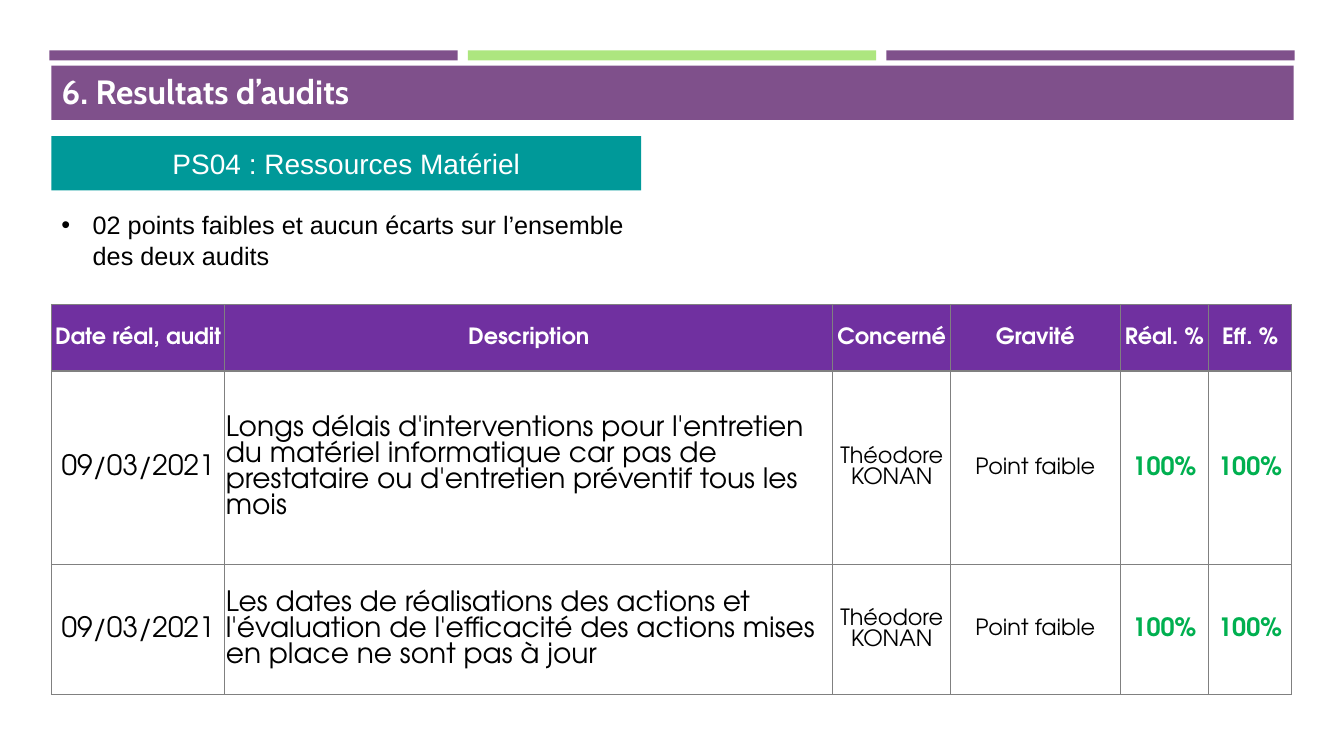
import pptx
import pptx.util
import pptx.dml.color
import pptx.enum.shapes
import pptx.enum.text
import pptx.oxml
import pptx.oxml.ns

RGBColor = pptx.dml.color.RGBColor
PURPLE = RGBColor(0x7F, 0x50, 0x8B)
GREEN = RGBColor(0xAD, 0xE6, 0x7F)
TEAL = RGBColor(0x00, 0x99, 0x99)
VIOLET = RGBColor(0x70, 0x30, 0xA0)
SCORE = RGBColor(0x00, 0xB0, 0x50)
GREY = RGBColor(0x80, 0x80, 0x80)
WHITE = RGBColor(0xFF, 0xFF, 0xFF)
BLACK = RGBColor(0x00, 0x00, 0x00)

EMU_PER_PX = 9144
TABLE_FONT = "TeX Gyre Adventor"
LEFT = pptx.enum.text.PP_ALIGN.LEFT
CENTER = pptx.enum.text.PP_ALIGN.CENTER
TOP = pptx.enum.text.MSO_ANCHOR.TOP
MIDDLE = pptx.enum.text.MSO_ANCHOR.MIDDLE

COLUMN_WIDTHS = [172, 603, 117, 168, 88, 82]
ROW_HEIGHTS = [66, 192, 129]
HEADERS = ["Date réal, audit", "Description", "Concerné", "Gravité", "Réal. %", "Eff. %"]
FINDINGS = [
    "Longs délais d'interventions pour l'entretien du matériel informatique car pas de "
    "prestataire ou d'entretien préventif tous les mois",
    "Les dates de réalisations des actions et l'évaluation de l'efficacité des actions "
    "mises en place ne sont pas à jour",
]
BODY_SIZES = [20, 20, 16, 16, 18, 18]


def px(length):
    return pptx.util.Emu(length * EMU_PER_PX)


def place(shape, left, top, width, height):
    shape.left, shape.top = px(left), px(top)
    shape.width, shape.height = px(width), px(height)


def style(para, font, size, color, bold=False, align=LEFT):
    para.alignment = align
    para.font.name = font
    para.font.size = pptx.util.Pt(size)
    para.font.color.rgb = color
    para.font.bold = bold


def add_bar(page, left, top, width, height, color):
    bar = page.shapes.add_shape(
        pptx.enum.shapes.MSO_SHAPE.RECTANGLE, px(left), px(top), px(width), px(height))
    bar.shadow.inherit = False
    bar.fill.solid()
    bar.fill.fore_color.rgb = color
    bar.line.fill.background()
    return bar


def set_title(page, text):
    title = page.shapes.title
    place(title, 51, 65, 1232, 54)
    title.fill.solid()
    title.fill.fore_color.rgb = PURPLE
    frame = title.text_frame
    frame.text = text
    frame.vertical_anchor = TOP
    frame.auto_size = pptx.enum.text.MSO_AUTO_SIZE.NONE
    style(frame.paragraphs[0], "Cabin", 24, WHITE, bold=True)


def add_heading(page, text):
    heading = add_bar(page, 51, 135, 585, 54, TEAL)
    frame = heading.text_frame
    frame.text = text
    frame.vertical_anchor = MIDDLE
    style(frame.paragraphs[0], "Arial", 20, WHITE, align=CENTER)


def set_bullet(page, text):
    body = page.placeholders[1]
    place(body, 51, 203, 585, 71)
    frame = body.text_frame
    frame.text = text
    frame.vertical_anchor = TOP
    frame.auto_size = pptx.enum.text.MSO_AUTO_SIZE.SHAPE_TO_FIT_TEXT
    para = frame.paragraphs[0]
    para.space_before = pptx.util.Pt(0)
    properties = para._p.get_or_add_pPr()
    properties.set("marL", str(px(31)))
    properties.set("indent", str(px(-31)))
    namespace = pptx.oxml.ns.nsdecls("a")
    properties.append(pptx.oxml.parse_xml(f'<a:buFont {namespace} typeface="Arial"/>'))
    properties.append(pptx.oxml.parse_xml(f'<a:buChar {namespace} char="•"/>'))
    style(para, "Arial", 18, BLACK)


def set_borders(cell, widths):
    properties = cell._tc.get_or_add_tcPr()
    for index, (side, width) in enumerate(zip("LRTB", widths)):
        properties.insert(index, pptx.oxml.parse_xml(
            f'<a:ln{side} {pptx.oxml.ns.nsdecls("a")} w="{pptx.util.Pt(width)}">'
            f'<a:solidFill><a:srgbClr val="{GREY}"/></a:solidFill></a:ln{side}>'))


def fill_cell(cell, row, column, text):
    header = row == 0
    score = column >= 4 and not header
    cell.margin_left = cell.margin_right = cell.margin_top = px(1)
    cell.margin_bottom = 0
    cell.vertical_anchor = MIDDLE
    cell.text = text
    style(
        cell.text_frame.paragraphs[0],
        TABLE_FONT,
        16 if header else BODY_SIZES[column],
        WHITE if header else SCORE if score else BLACK,
        bold=header or score,
        align=LEFT if column == 1 and not header else CENTER,
    )
    if header:
        cell.fill.solid()
        cell.fill.fore_color.rgb = VIOLET
    else:
        cell.fill.background()
    left = 1 if column <= 1 else 0.5
    right = 1 if column in (0, len(HEADERS) - 1) else 0.5
    set_borders(cell, (left, right, 1, 1))


def add_audit_table(page):
    rows = [HEADERS] + [
        ["09/03/2021", finding, "Théodore KONAN", "Point faible", "100%", "100%"]
        for finding in FINDINGS
    ]
    table = page.shapes.add_table(
        len(rows), len(HEADERS), px(51), px(302),
        px(sum(COLUMN_WIDTHS)), px(sum(ROW_HEIGHTS))).table
    table.horz_banding = False
    for column, width in zip(table.columns, COLUMN_WIDTHS):
        column.width = px(width)
    for row, height in zip(table.rows, ROW_HEIGHTS):
        row.height = px(height)
    for row, texts in enumerate(rows):
        for column, text in enumerate(texts):
            fill_cell(table.cell(row, column), row, column, text)


def main():
    deck = pptx.Presentation()
    deck.slide_width, deck.slide_height = px(1333), px(750)
    page = deck.slides.add_slide(deck.slide_layouts[1])
    for index, color in enumerate((PURPLE, GREEN, PURPLE)):
        add_bar(page, 49 + 415 * index, 50, 405, 10, color)
    set_title(page, "6. Resultats d’audits")
    add_heading(page, "PS04 : Ressources Matériel")
    set_bullet(page, "02 points faibles et aucun écarts sur l’ensemble des deux audits")
    add_audit_table(page)
    deck.save("out.pptx")


if __name__ == "__main__":
    main()
